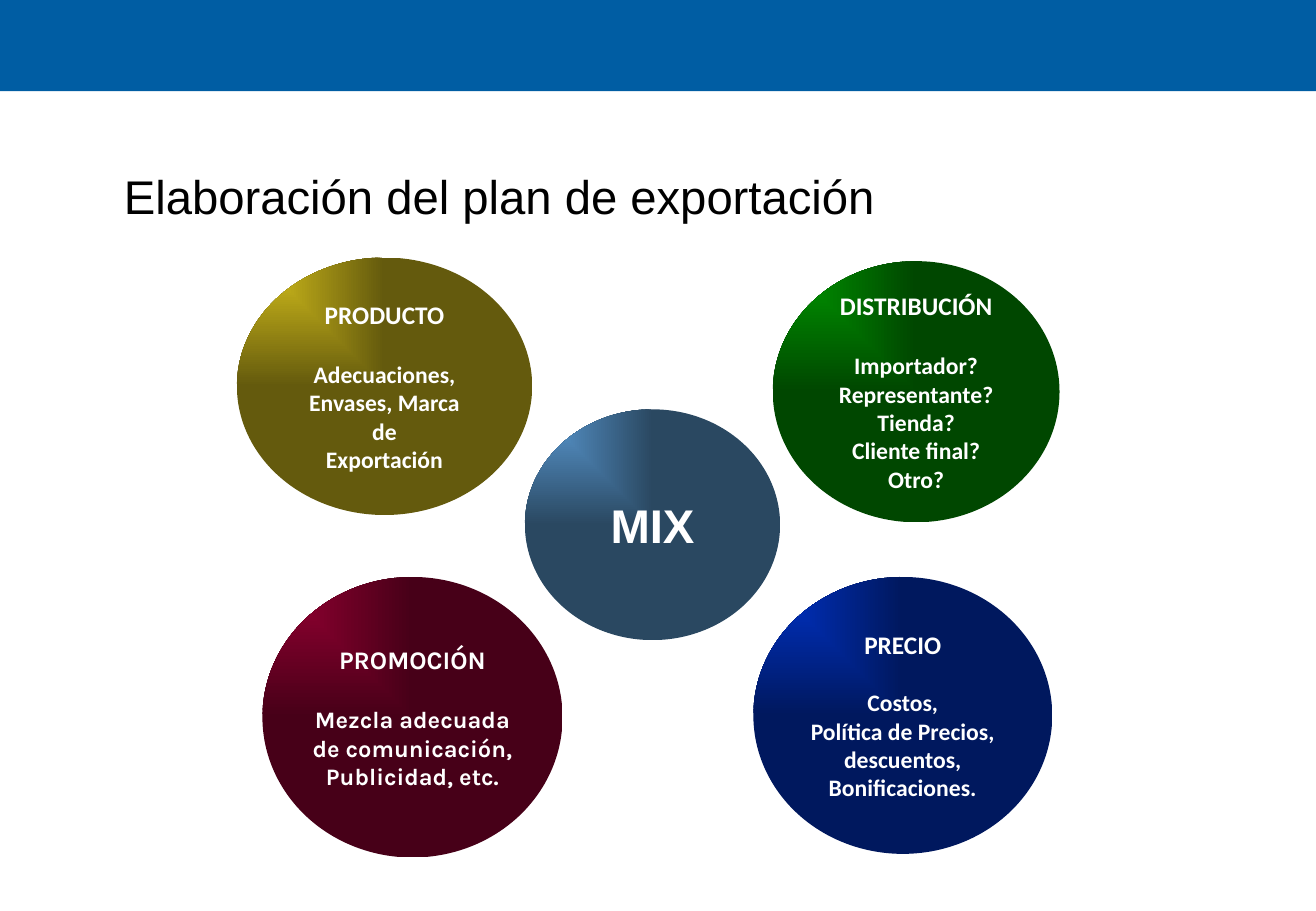
from lxml import etree
from pptx import Presentation
from pptx.dml.color import RGBColor
from pptx.enum.shapes import MSO_SHAPE
from pptx.enum.text import MSO_ANCHOR, MSO_AUTO_SIZE, PP_ALIGN
from pptx.oxml.ns import qn
from pptx.util import Inches, Pt

RECTANGLE = MSO_SHAPE.RECTANGLE
ELLIPSE = MSO_SHAPE.OVAL
TOP = MSO_ANCHOR.TOP
MIDDLE = MSO_ANCHOR.MIDDLE
LEFT = PP_ALIGN.LEFT
CENTER = PP_ALIGN.CENTER
NO_AUTOFIT = MSO_AUTO_SIZE.NONE
TITLE_ONLY = 5
SLIDE_WIDTH = 10.83
SLIDE_HEIGHT = 7.5

CIRCLES = [
    {"box": (6.2, 4.75, 2.46, 2.28), "colors": ("0033CC", "00185E"),
     "heading": "PRECIO", "gap": 17,
     "lines": ["Costos,", "Política de Precios,", "descuentos,", "Bonificaciones."]},
    {"box": (6.36, 2.15, 2.36, 2.15), "colors": ("009900", "004700"),
     "heading": "DISTRIBUCIÓN",
     "lines": ["Importador?", "Representante?", "Tienda?", "Cliente final?", "Otro?"]},
    {"box": (2.16, 4.75, 2.47, 2.31), "colors": ("990033", "470018"),
     "heading": "PROMOCIÓN", "font": "Karla",
     "lines": ["Mezcla adecuada", "de comunicación,", "Publicidad, etc."]},
    {"box": (1.95, 2.12, 2.43, 2.12), "colors": ("D8C21C", "645A0D"),
     "heading": "PRODUCTO",
     "lines": ["Adecuaciones,", "Envases, Marca", "de", "Exportación"]},
]


def rgb(value):
    return RGBColor.from_string(value)


def write(para, text, size, font="Calibri", color="FFFFFF", bold=True,
          align=CENTER, before=0):
    para.alignment = align
    para.space_before = Pt(before)
    span = para.add_run()
    span.text = text
    span.font.size = Pt(size)
    span.font.name = font
    span.font.bold = bold
    span.font.color.rgb = rgb(color)


def add_plain_shape(slide, kind, box):
    shape = slide.shapes.add_shape(kind, *map(Inches, box))
    shape.shadow.inherit = False
    shape.line.fill.background()
    return shape


def fill_from_corner(shape, colors):
    shape.fill.gradient()
    for stop, color in zip(shape.fill.gradient_stops, colors):
        stop.color.rgb = rgb(color)
    gradient = shape._element.spPr.find(qn("a:gradFill"))
    gradient.remove(gradient.find(qn("a:lin")))
    spread = etree.SubElement(gradient, qn("a:path"), path="rect")
    etree.SubElement(spread, qn("a:fillToRect"), r="100000", b="100000")


def add_circle(slide, box, colors):
    circle = add_plain_shape(slide, ELLIPSE, box)
    fill_from_corner(circle, colors)
    frame = circle.text_frame
    frame.word_wrap = False
    frame.vertical_anchor = MIDDLE
    return frame


def add_header(slide, box):
    bar = add_plain_shape(slide, RECTANGLE, box)
    bar.fill.solid()
    bar.fill.fore_color.rgb = rgb("005DA3")


def add_title(slide, box):
    title = slide.shapes.title
    title.left, title.top, title.width, title.height = map(Inches, box)
    frame = title.text_frame
    frame.word_wrap = True
    frame.auto_size = NO_AUTOFIT
    frame.vertical_anchor = TOP
    write(frame.paragraphs[0], "Elaboración del plan de exportación", 28,
          font="Arial", color="000000", bold=False, align=LEFT)


def add_center(slide, box):
    frame = add_circle(slide, box, ("5B9BD5", "2A4861"))
    write(frame.paragraphs[0], "MIX", 28, font="Arial")


def add_topic(slide, box, colors, heading, lines, font="Calibri", gap=18):
    frame = add_circle(slide, box, colors)
    write(frame.paragraphs[0], heading, 15, font=font)
    for index, line in enumerate(lines):
        write(frame.add_paragraph(), line, 14, font=font,
              before=0 if index else gap)


def main():
    deck = Presentation()
    deck.slide_width = Inches(SLIDE_WIDTH)
    deck.slide_height = Inches(SLIDE_HEIGHT)
    page = deck.slides.add_slide(deck.slide_layouts[TITLE_ONLY])
    add_header(page, (0, 0, SLIDE_WIDTH, 0.75))
    add_title(page, (0.92, 1.33, 8.99, 0.57))
    add_center(page, (4.32, 3.37, 2.1, 1.9))
    for circle in CIRCLES:
        add_topic(page, **circle)
    deck.save("out.pptx")


if __name__ == "__main__":
    main()
